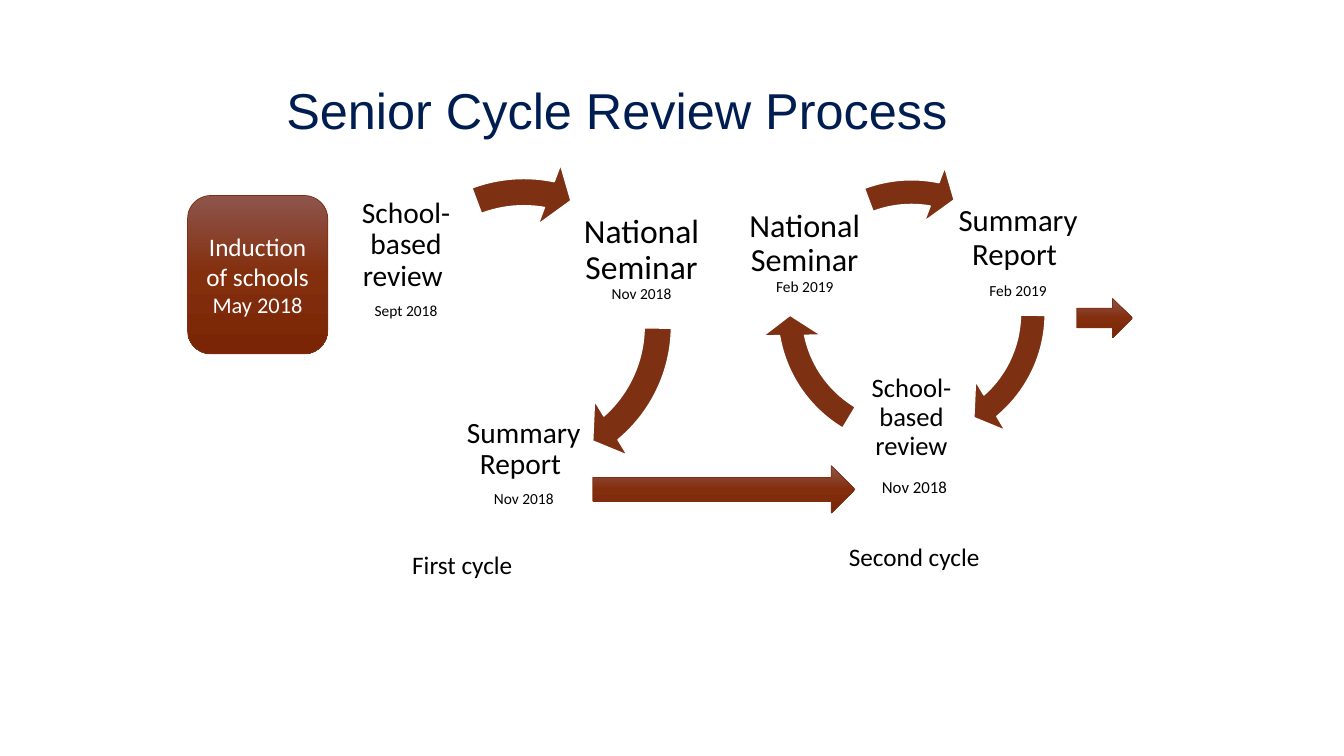
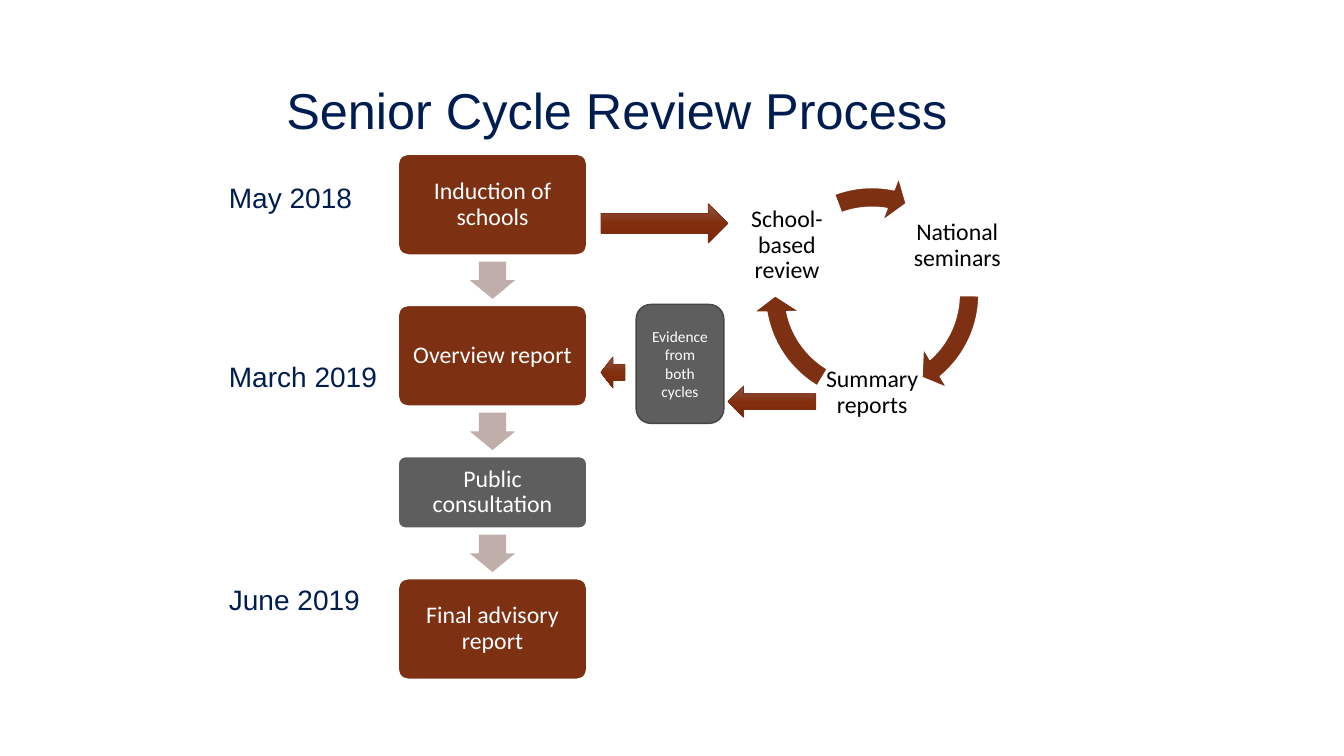
from copy import deepcopy

from pptx import Presentation
from pptx.dml.color import RGBColor
from pptx.enum.shapes import MSO_SHAPE as SHAPE
from pptx.enum.text import MSO_ANCHOR as ANCHOR, MSO_AUTO_SIZE as AUTO, PP_ALIGN as ALIGN
from pptx.oxml.ns import qn
from pptx.util import Emu, Pt

PX = 9144
NAVY, RUST, GREY, DARK_GREY, TAUPE = "001D51", "7E3012", "5E5E5E", "464646", "C0AEAB"
BLACK, WHITE = "000000", "FFFFFF"
GRADIENT = [(0, "8E554C"), (0.5, "832E0D"), (1, "7A2606")]
TITLE = "Senior Cycle Review Process"
TITLE_BOX = (274, 40, 967, 145)
RING_ANGLES = {"right": (29.67, 0.5), "bottom": (101.74, 72.58), "left": (168.59, 149.65)}


def emu(*lengths):
    return [Emu(round(v * PX)) for v in lengths]


def rgb(value):
    return RGBColor.from_string(value)


def write(tf, paragraphs, color=BLACK, font="Calibri", align=ALIGN.CENTER,
          anchor=ANCHOR.MIDDLE, spacing=0.9, after=0, inset=(10, 5)):
    tf.word_wrap = True
    tf.auto_size = AUTO.NONE
    tf.vertical_anchor = anchor
    tf.margin_left, tf.margin_top = tf.margin_right, tf.margin_bottom = emu(*inset)
    for i, runs in enumerate(paragraphs):
        p = tf.add_paragraph() if i else tf.paragraphs[0]
        p.alignment = align
        p.line_spacing = spacing
        p.space_before = Pt(0)
        p.space_after = Pt(round(after * runs[0][1]))
        for text, size in runs:
            r = p.add_run()
            r.text = text
            r.font.name = font
            r.font.size = Pt(size)
            r.font.color.rgb = rgb(color)


def text_box(slide, box, paragraphs, **fmt):
    write(slide.shapes.add_textbox(*emu(*box)).text_frame, paragraphs, **fmt)


def shape(slide, kind, box, fill=None, line=None, width=1, adj=()):
    s = slide.shapes.add_shape(kind, *emu(*box))
    s.shadow.inherit = False
    for i, value in enumerate(adj):
        s.adjustments[i] = value
    if fill:
        s.fill.solid()
        s.fill.fore_color.rgb = rgb(fill)
    else:
        s.fill.gradient()
        s.fill.gradient_angle = 270
        stops = s._element.spPr.find(".//" + qn("a:gsLst"))
        stops.insert(1, deepcopy(stops[0]))
        for stop, (position, color) in zip(s.fill.gradient_stops, GRADIENT):
            stop.position = position
            stop.color.rgb = rgb(color)
    if line:
        s.line.color.rgb = rgb(line)
        s.line.width = Pt(width)
    else:
        s.line.fill.background()
    return s


def glossy(slide, kind, *box):
    return shape(slide, kind, box, line=RUST, width=0.5)


def cycle(slide, x, y, size, labels, arrows=tuple(RING_ANGLES), inset=3):
    side = 0.423 * size
    middle = x + (size - side) / 2
    corners = {
        "right": (middle + 0.355 * size, y + 0.085 * size),
        "bottom": (middle, y + 0.7 * size),
        "left": (middle - 0.355 * size, y + 0.085 * size),
    }
    for name, paragraphs in labels.items():
        text_box(slide, (*corners[name], side, side), paragraphs, after=0.35, inset=(inset, inset))
    for name in arrows:
        shape(slide, SHAPE.CIRCULAR_ARROW, (x, y, size, size), RUST, WHITE,
              adj=(0.082, 5.755, *RING_ANGLES[name], 0.096))


def step_column(slide, x, y, width, steps, gap=50):
    for i, (text, height, fill) in enumerate(steps):
        if i:
            shape(slide, SHAPE.DOWN_ARROW, (x + (width - 45) / 2, y - (gap + 37) / 2, 45, 37),
                  TAUPE, adj=(0.6, 0.5))
        s = shape(slide, SHAPE.ROUNDED_RECTANGLE, (x, y, width, height), fill, WHITE, adj=(0.1,))
        write(s.text_frame, [[(text, 17)]], WHITE, after=0.35, inset=(10, 10))
        y += height + gap


def place(holder, box):
    holder.left, holder.top, holder.width, holder.height = emu(*box)
    return holder.text_frame


def dates(slide, box, entries):
    tf = place(slide.placeholders[1], box)
    write(tf, [[(text, 20)] for text, _ in entries], NAVY, "Arial", ALIGN.LEFT, ANCHOR.TOP)
    for p, (_, before) in zip(tf.paragraphs, entries):
        p.space_before = Pt(before)
        pPr = p._p.get_or_add_pPr()
        pPr.set("marL", "0")
        pPr.set("indent", "0")
        pPr.append(pPr.makeelement(qn("a:buNone"), {}))


def new_slide(prs, layout):
    slide = prs.slides.add_slide(prs.slide_layouts[layout])
    write(place(slide.shapes.title, TITLE_BOX), [[(TITLE, 36)]], NAVY, "Arial", ALIGN.LEFT)
    return slide


def two_cycles(prs):
    slide = new_slide(prs, 5)
    cycle(slide, 755, 162, 298, {
        "right": [[("Summary Report ", 22)], [("Feb 2019", 11)]],
        "bottom": [[("School-based review", 19)], [(" ", 19), ("Nov 2018", 12)]],
        "left": [[("National Seminar ", 23), ("Feb 2019", 11)]],
    })
    cycle(slide, 355, 159, 329, {
        "right": [[("National Seminar ", 24), ("Nov 2018", 11)]],
        "bottom": [[("Summary Report ", 21)], [("Nov 2018", 11)]],
        "left": [[("School-based review ", 21)], [("Sept 2018", 11)]],
    }, arrows=("right", "left"))
    induction = glossy(slide, SHAPE.FLOWCHART_ALTERNATE_PROCESS, 186, 194, 139, 157)
    write(induction.text_frame, [[("Induction of schools", 18)], [("May 2018", 16)]],
          WHITE, spacing=1)
    glossy(slide, SHAPE.RIGHT_ARROW, 588, 462, 260, 47)
    glossy(slide, SHAPE.RIGHT_ARROW, 1068, 296, 55, 39)
    for text, *box in (("First cycle", 399, 540, 260, 40), ("Second cycle", 832, 532, 213, 40)):
        text_box(slide, box, [[(text, 18)]], align=ALIGN.LEFT, anchor=ANCHOR.TOP, spacing=1)


def review_timeline(prs):
    slide = new_slide(prs, 1)
    dates(slide, (217, 178, 900, 495), [("May 2018", 0), ("March 2019", 106), ("June 2019", 138)])
    cycle(slide, 746, 173, 238, {
        "right": [[("National seminars", 17)]],
        "bottom": [[("Summary reports", 17)]],
        "left": [[("School-based review", 17)]],
    }, inset=2)
    step_column(slide, 395, 153, 187, [
        ("Induction of schools", 100, RUST),
        ("Overview report", 100, RUST),
        ("Public consultation", 71, GREY),
        ("Final advisory report", 100, RUST),
    ])
    glossy(slide, SHAPE.RIGHT_ARROW, 596, 202, 126, 39)
    glossy(slide, SHAPE.LEFT_ARROW, 722, 383, 87, 31)
    glossy(slide, SHAPE.LEFT_ARROW, 596, 354, 24, 31)
    evidence = shape(slide, SHAPE.FLOWCHART_ALTERNATE_PROCESS, (631, 302, 87, 118), GREY, DARK_GREY)
    write(evidence.text_frame, [[("Evidence from both cycles", 11)]], WHITE, spacing=1)


def main():
    prs = Presentation()
    prs.slide_width, prs.slide_height = emu(1333, 750)
    two_cycles(prs)
    review_timeline(prs)
    prs.save("out.pptx")


if __name__ == "__main__":
    main()
